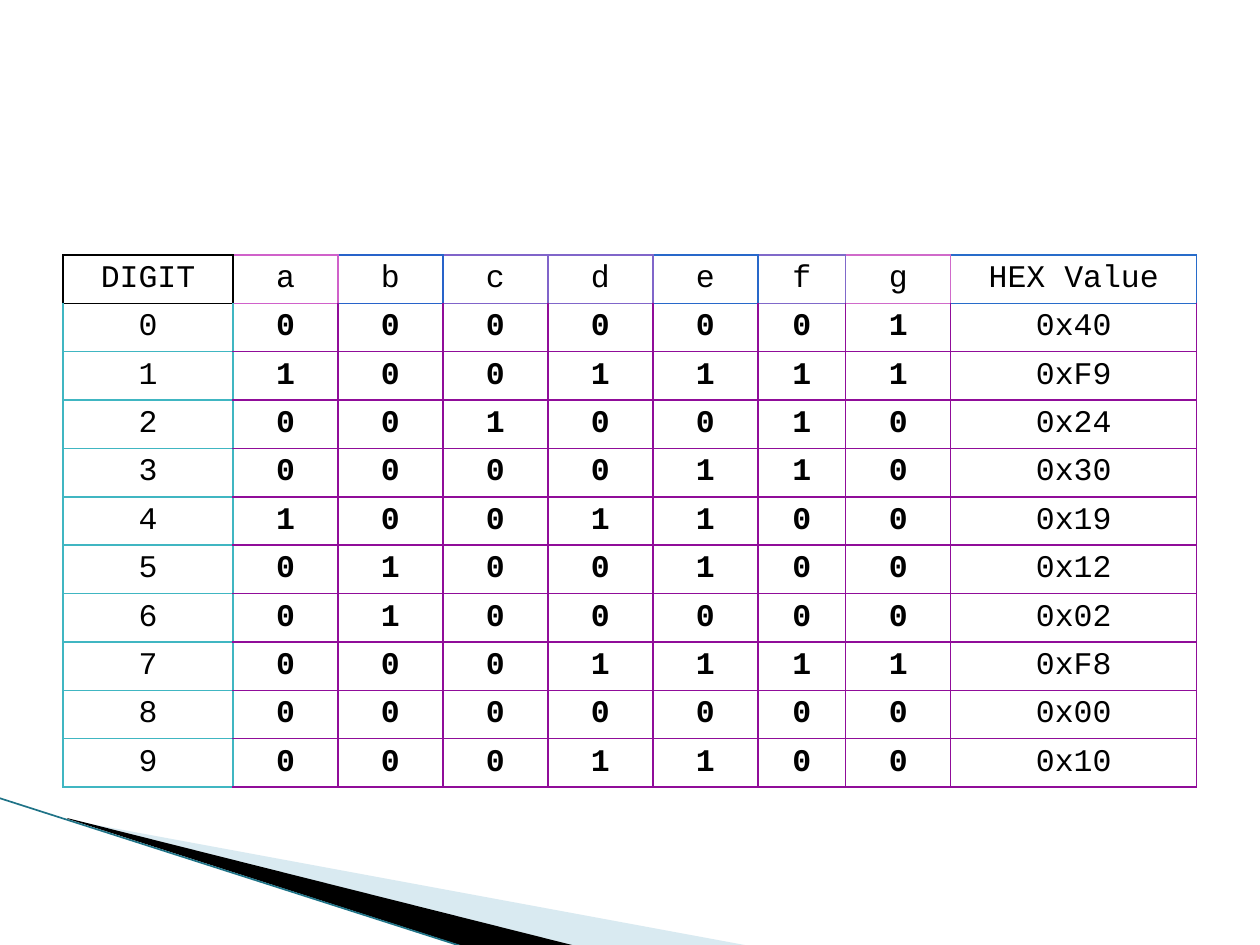
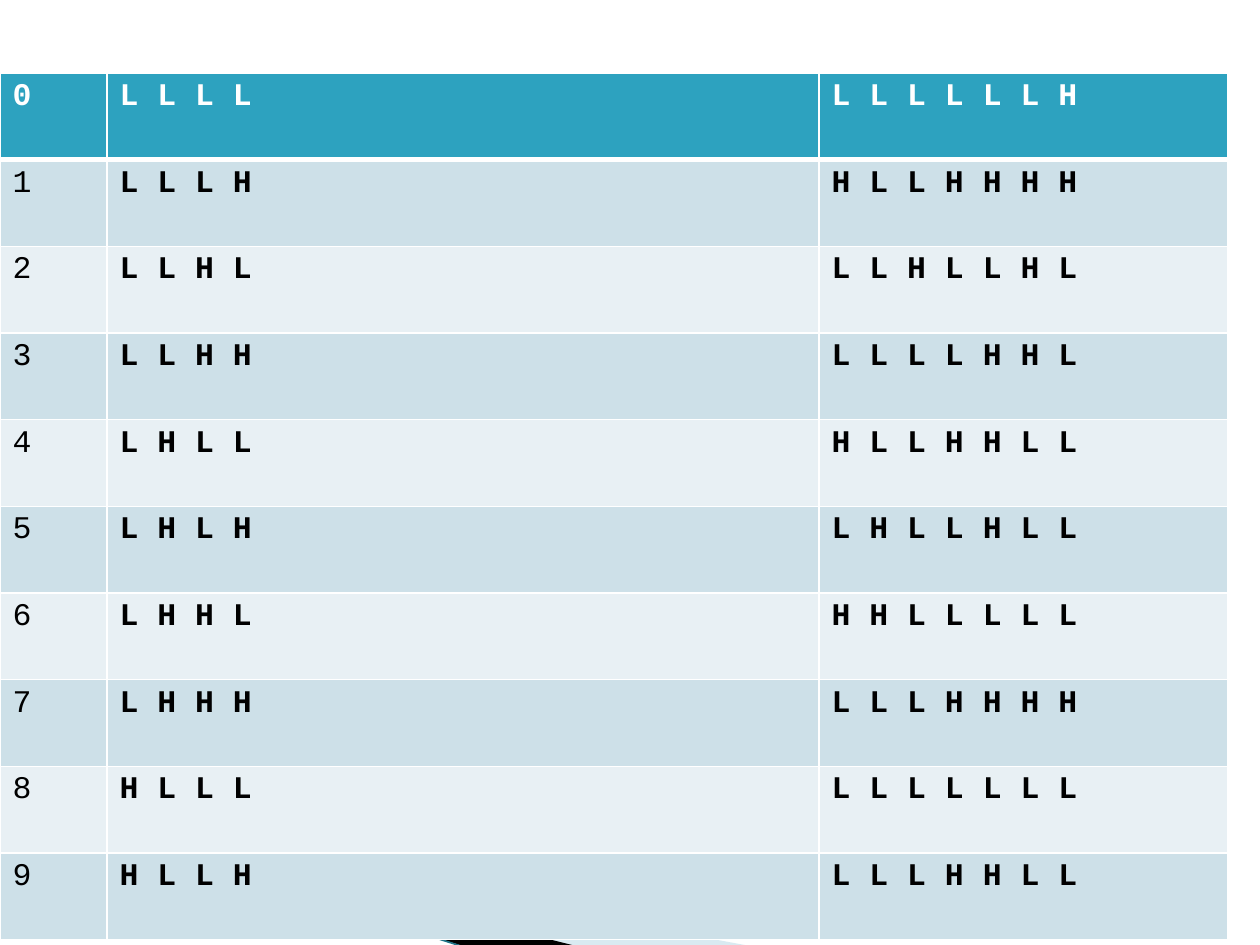
"""Two slides of seven-segment display truth tables."""
from lxml import etree
from pptx import Presentation
from pptx.dml.color import RGBColor
from pptx.enum.shapes import MSO_CONNECTOR
from pptx.enum.text import PP_ALIGN
from pptx.oxml.ns import qn
from pptx.util import Inches, Pt

STRAIGHT = MSO_CONNECTOR.STRAIGHT
LEFT, CENTER = PP_ALIGN.LEFT, PP_ALIGN.CENTER
PX = Inches(1) / 126
FONT, SIZE = "Courier New", 18

COLORS = {
    "black": "000000", "white": "FFFFFF", "cyan": "40B6C2", "purple": "900D99",
    "header": "2DA2BF", "odd": "CDE0E8", "even": "E8F0F4",
    "pale": "A0CBDC", "edge": "1F7387",
}
HEADER_BORDERS = ["000000", "D061CA", "2863CA", "8064CA", "8066CA",
                  "2868CA", "8069CA", "D06ACA", "286CCA"]

SEGMENTS = [
    ("0000001", "0x40"), ("1001111", "0xF9"), ("0010010", "0x24"),
    ("0000110", "0x30"), ("1001100", "0x19"), ("0100100", "0x12"),
    ("0100000", "0x02"), ("0001111", "0xF8"), ("0000000", "0x00"),
    ("0001100", "0x10"),
]
LEVELS = [
    ("LLLL", "LLLLLLH"), ("LLLH", "HLLHHHH"), ("LLHL", "LLHLLHL"),
    ("LLHH", "LLLLHHL"), ("LHLL", "HLLHHLL"), ("LHLH", "LHLLHLL"),
    ("LHHL", "HHLLLLL"), ("LHHH", "LLLHHHH"), ("HLLL", "LLLLLLL"),
    ("HLLH", "LLLHHLL"),
]

WEDGES = [
    ("pale", 40, [(69, 820), (750, 946), (575, 946), (69, 819)]),
    ("black", 100, [(67, 818), (576, 946), (469, 948), (68, 819)]),
]
EDGE = (-1, 798, 467, 948)


def px(n):
    return round(n * PX)


def rgb(name):
    return RGBColor.from_string(COLORS[name])


def add_base(prs):
    s = prs.slides.add_slide(prs.slide_layouts[6])
    for color, opacity, points in WEDGES:
        builder = s.shapes.build_freeform(*points[0], scale=PX)
        builder.add_line_segments(points[1:], close=True)
        sp = builder.convert_to_shape()
        sp.shadow.inherit = False
        sp.line.fill.background()
        sp.fill.solid()
        sp.fill.fore_color.rgb = rgb(color)
        if opacity < 100:
            clr = sp.fill._xPr.find(".//" + qn("a:srgbClr"))
            etree.SubElement(clr, qn("a:alpha"), val=str(opacity * 1000))
    line = s.shapes.add_connector(STRAIGHT, *map(px, EDGE))
    line.line.color.rgb = rgb("edge")
    line.line.width = Pt(0.95)
    etree.SubElement(line._element.spPr, qn("a:effectLst"))
    return s


def set_borders(cell, **sides):
    tcPr = cell._tc.get_or_add_tcPr()
    for side in "LRTB":
        color, width = sides[side]
        ln = etree.SubElement(tcPr, qn("a:ln" + side), w=str(Pt(width)))
        fill = etree.SubElement(ln, qn("a:solidFill"))
        etree.SubElement(fill, qn("a:srgbClr"), val=color)


def add_grid(s, box, widths, rows, style):
    """Add a table; each cell's left and top borders follow its neighbours."""
    x, y, height = box
    frame = s.shapes.add_table(len(rows), len(widths), px(x), px(y),
                               px(sum(widths)), px(height))
    table = frame.table
    table.first_row = table.horz_banding = False
    for col, width in zip(table.columns, widths):
        col.width = px(width)
    for i, row in enumerate(rows):
        table.rows[i].height = px(height / len(rows))
        for j, text in enumerate(row):
            cell, look = table.cell(i, j), style(i, j)
            own = look["border"]
            set_borders(cell, R=own, B=own if "bottom" not in look else look["bottom"],
                        L=style(i, j - 1)["border"] if j else own,
                        T=look.get("top", style(i - 1, j)["border"] if i else own))
            if look["fill"]:
                cell.fill.solid()
                cell.fill.fore_color.rgb = rgb(look["fill"])
            else:
                cell.fill.background()
            cell.margin_left = cell.margin_right = px(look["margin"])
            cell.text = text
            p = cell.text_frame.paragraphs[0]
            p.alignment = look["align"]
            p.font.name, p.font.size = FONT, Pt(SIZE)
            p.font.bold = look["bold"]
            p.font.color.rgb = rgb(look["color"])


def segment_style(i, j):
    color = COLORS["purple" if j else "cyan"] if i else HEADER_BORDERS[j]
    return {"border": (color, 1), "fill": None, "margin": 9, "align": CENTER,
            "bold": i > 0 and 0 < j < 8, "color": "black"}


def level_style(i, j):
    look = {"border": (COLORS["white"], 1), "margin": 12.6, "align": LEFT,
            "fill": ("odd" if i % 2 else "even") if i else "header",
            "bold": i == 0 or j > 0, "color": "black" if i else "white"}
    if i < 2:
        look["top" if i else "bottom"] = (COLORS["white"], 3)
    return look


def main():
    prs = Presentation()
    prs.slide_width, prs.slide_height = Inches(10), Inches(7.5)

    rows = [["DIGIT", *"abcdefg", "HEX Value"]]
    rows += [[str(n), *bits, code] for n, (bits, code) in enumerate(SEGMENTS)]
    widths = [170] + [105] * 5 + [88, 105, 246]
    add_grid(add_base(prs), (63, 255, 532), widths, rows, segment_style)

    rows = [[str(n), *map(" ".join, pair)] for n, pair in enumerate(LEVELS)]
    add_grid(add_base(prs), (0, 73, 867), [107, 712, 409], rows, level_style)

    prs.save("out.pptx")


if __name__ == "__main__":
    main()
